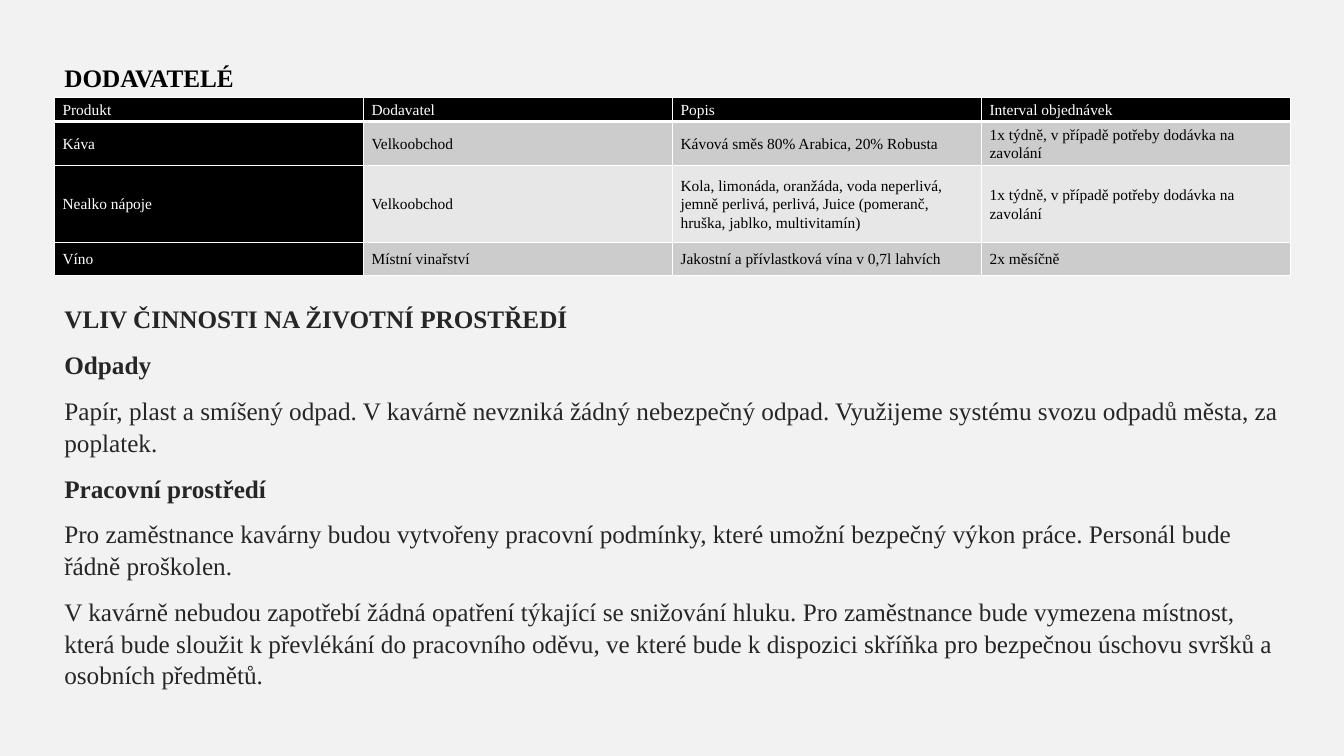
from lxml.etree import SubElement
from pptx import Presentation
from pptx.dml.color import RGBColor
from pptx.enum.text import MSO_ANCHOR
from pptx.oxml.ns import qn
from pptx.util import Inches, Pt

BACKGROUND = RGBColor(0xF2, 0xF2, 0xF2)
BLACK = RGBColor(0x00, 0x00, 0x00)
WHITE = RGBColor(0xFF, 0xFF, 0xFF)
BODY_TEXT = RGBColor(0x26, 0x26, 0x26)
DARK_BAND = RGBColor(0xCC, 0xCC, 0xCC)
LIGHT_BAND = RGBColor(0xE7, 0xE7, 0xE7)

LEFT, WIDTH = 0.54, 12.26
ROW_HEIGHTS = [0.23, 0.44, 0.76, 0.33]
SUPPLIERS = [
    ["Produkt", "Dodavatel", "Popis", "Interval objednávek"],
    ["Káva", "Velkoobchod", "Kávová směs 80% Arabica, 20% Robusta",
     "1x týdně, v případě potřeby dodávka na zavolání"],
    ["Nealko nápoje", "Velkoobchod",
     "Kola, limonáda, oranžáda, voda neperlivá, jemně perlivá, perlivá, "
     "Juice (pomeranč, hruška, jablko, multivitamín)",
     "1x týdně, v případě potřeby dodávka na zavolání"],
    ["Víno", "Místní vinařství", "Jakostní a přívlastková vína v 0,7l lahvích",
     "2x měsíčně"],
]
# Each entry is (text, bold).
ENVIRONMENT = [
    ("VLIV ČINNOSTI NA ŽIVOTNÍ PROSTŘEDÍ", True),
    ("Odpady", True),
    ("Papír, plast a smíšený odpad. V kavárně nevzniká žádný nebezpečný odpad. "
     "Využijeme systému svozu odpadů města, za poplatek.", False),
    ("Pracovní prostředí", True),
    ("Pro zaměstnance kavárny budou vytvořeny pracovní podmínky, které umožní "
     "bezpečný výkon práce. Personál bude řádně proškolen.", False),
    ("V kavárně nebudou zapotřebí žádná opatření týkající se snižování hluku. "
     "Pro zaměstnance bude vymezena místnost, která bude sloužit k převlékání do "
     "pracovního oděvu, ve které bude k dispozici skříňka pro bezpečnou úschovu "
     "svršků a osobních předmětů.", False),
]


class SlideBuilder:
    def __init__(self, slide, font_name):
        self.slide = slide
        self.font_name = font_name

    def background(self, color):
        fill = self.slide.background.fill
        fill.solid()
        fill.fore_color.rgb = color

    def run(self, paragraph, text, size, color, bold=False):
        run = paragraph.add_run()
        run.text = text
        run.font.name = self.font_name
        run.font.size = Pt(size)
        run.font.bold = bold
        run.font.color.rgb = color

    def text_box(self, top, width, height, paragraphs, color, wrap=True,
                 line_spacing=1.0):
        """Add a box of (text, bold) paragraphs at the left margin."""
        box = self.slide.shapes.add_textbox(
            Inches(LEFT), Inches(top), Inches(width), Inches(height))
        frame = box.text_frame
        frame.word_wrap = wrap
        for index, (text, bold) in enumerate(paragraphs):
            paragraph = frame.add_paragraph() if index else frame.paragraphs[0]
            paragraph.space_before = Pt(10 if index else 0)
            paragraph.line_spacing = line_spacing
            self.run(paragraph, text, 18, color, bold)

    def cell_borders(self, cell, bottom_width):
        properties = cell._tc.get_or_add_tcPr()
        widths = {"lnL": 1, "lnR": 1, "lnT": 1, "lnB": bottom_width}
        for side, width in widths.items():
            line = SubElement(properties, qn(f"a:{side}"), w=str(Pt(width)))
            fill = SubElement(line, qn("a:solidFill"))
            SubElement(fill, qn("a:srgbClr"), val=str(WHITE))

    def cell(self, cell, text, fill, color, bottom_width):
        self.cell_borders(cell, bottom_width)
        cell.fill.solid()
        cell.fill.fore_color.rgb = fill
        cell.vertical_anchor = MSO_ANCHOR.MIDDLE
        cell.margin_left = cell.margin_right = Inches(0.08)
        cell.margin_top = cell.margin_bottom = Inches(0.02)
        paragraph = cell.text_frame.paragraphs[0]
        paragraph.line_spacing = 1.07
        self.run(paragraph, text, 11, color)

    def table(self, top, rows, heights):
        """Add a banded table whose first row and column are black."""
        table = self.slide.shapes.add_table(
            len(rows), len(rows[0]), Inches(LEFT), Inches(top),
            Inches(WIDTH), Inches(sum(heights))).table
        for row_index, (texts, height) in enumerate(zip(rows, heights)):
            table.rows[row_index].height = Inches(height)
            band = DARK_BAND if row_index % 2 else LIGHT_BAND
            for column_index, text in enumerate(texts):
                heading = row_index == 0 or column_index == 0
                self.cell(table.cell(row_index, column_index), text,
                          BLACK if heading else band,
                          WHITE if heading else BLACK,
                          1 if row_index else 3)


def main():
    presentation = Presentation()
    presentation.slide_width = Inches(13.33)
    presentation.slide_height = Inches(7.5)
    slide = presentation.slides.add_slide(presentation.slide_layouts[6])
    builder = SlideBuilder(slide, "Times New Roman")
    builder.background(BACKGROUND)
    builder.text_box(2.95, WIDTH, 4.23, ENVIRONMENT, BODY_TEXT, line_spacing=1.05)
    builder.table(0.97, SUPPLIERS, ROW_HEIGHTS)
    builder.text_box(0.57, 1.9, 0.4, [("DODAVATELÉ", True)], BLACK, wrap=False)
    presentation.save("out.pptx")


if __name__ == "__main__":
    main()
